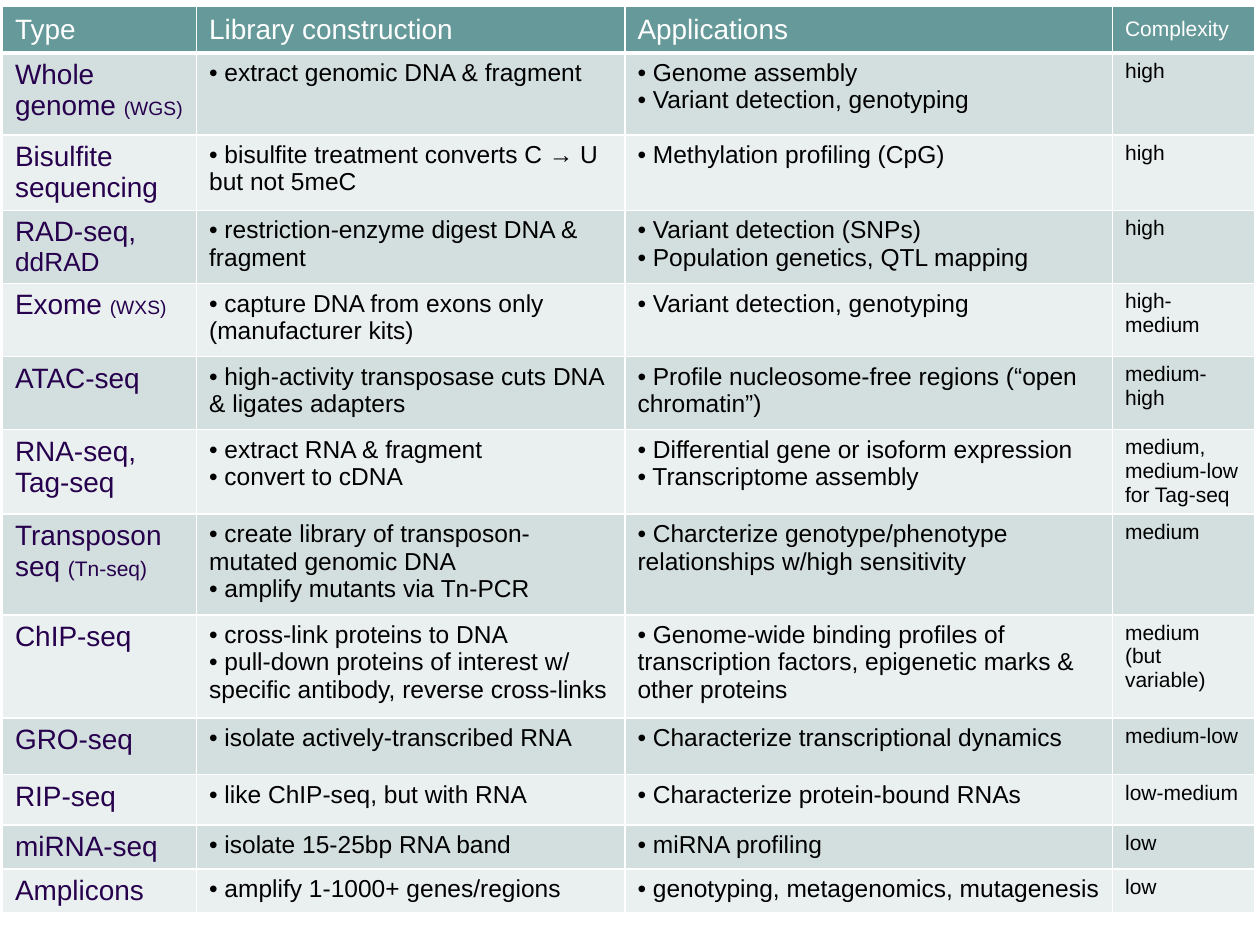
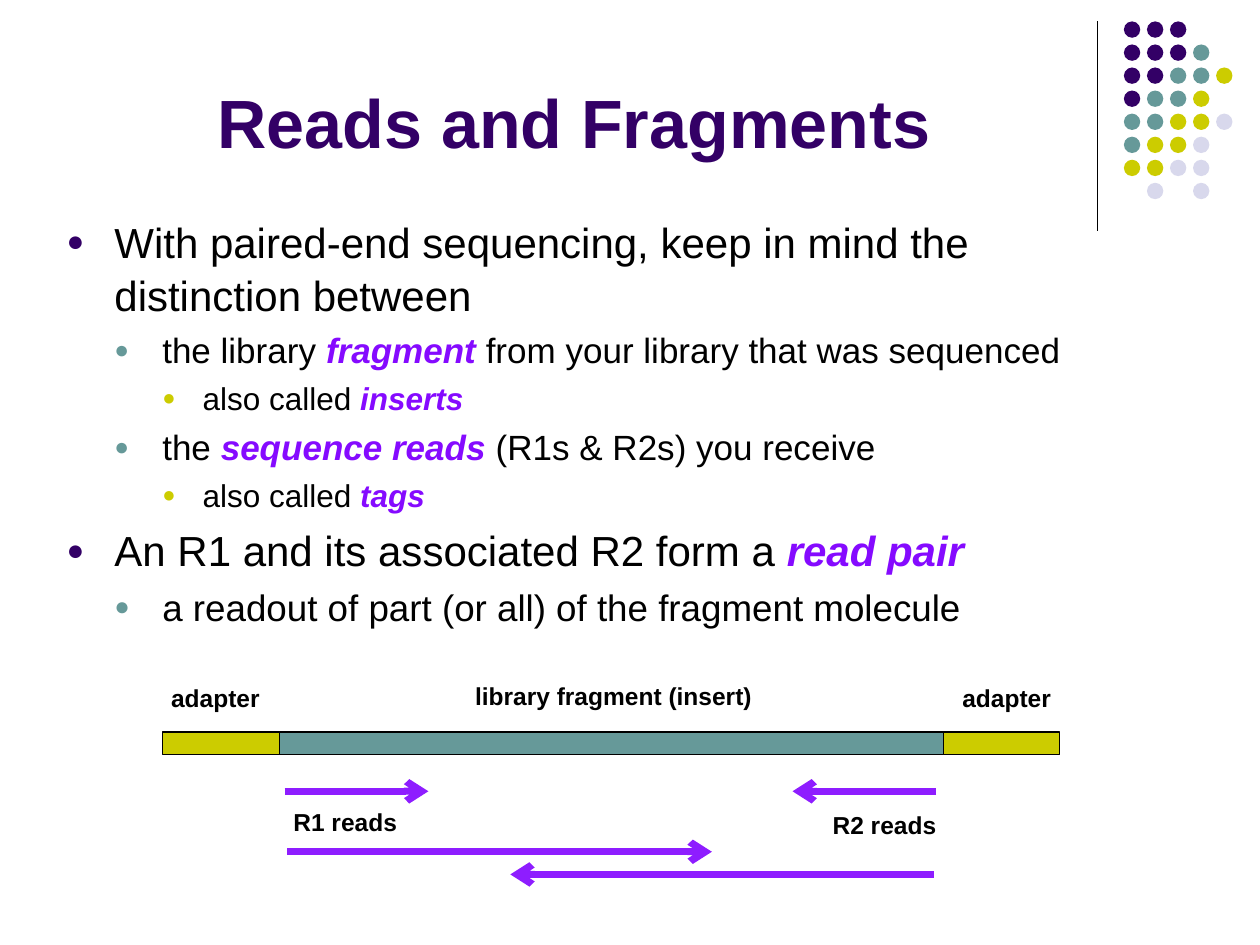
"""Build two slides: a table of sequencing library types, and reads versus fragments."""
from dataclasses import dataclass

from lxml.etree import SubElement
from pptx import Presentation
from pptx.dml.color import RGBColor
from pptx.enum.shapes import MSO_CONNECTOR as Connector, MSO_SHAPE as Shape
from pptx.enum.text import MSO_ANCHOR as Anchor, PP_ALIGN as Align
from pptx.oxml.ns import qn
from pptx.util import Inches, Pt


@dataclass(frozen=True)
class Theme:
    font: str = "Arial"
    purple: str = "330066"
    deep_purple: str = "26004D"
    violet: str = "850AFF"
    arrow: str = "8E1DFF"
    teal: str = "669999"
    olive: str = "CCCC00"
    lilac: str = "D8D8EC"
    dark_band: str = "D3DEDE"
    light_band: str = "EAEFEF"
    black: str = "000000"
    white: str = "FFFFFF"
    title: float = 39
    type_name: float = 16
    type_note: float = 11
    detail: float = 14
    small: float = 12


THEME = Theme()
WIDTH, HEIGHT = 10, 7.5

HEADINGS = ("Type", "Library construction", "Applications", "Complexity")
COLUMN_WIDTHS = (1.54, 3.4, 3.87, 1.13)
ROW_HEIGHTS = (0.37, 0.65, 0.6, 0.58, 0.58, 0.58, 0.67, 0.8, 0.82, 0.45, 0.4, 0.34, 0.34)
NOTE_SIZES = {"ddRAD": 15, "(Tn-seq)": 12}
LIBRARIES = [
    ("Whole genome *(WGS)", ["extract genomic DNA & fragment"],
     ["Genome assembly", "Variant detection, genotyping"], "high"),
    ("Bisulfite sequencing", ["bisulfite treatment converts C → U but not 5meC"],
     ["Methylation profiling (CpG)"], "high"),
    ("RAD-seq, *ddRAD", ["restriction-enzyme digest DNA & fragment"],
     ["Variant detection (SNPs)", "Population genetics, QTL mapping"], "high"),
    ("Exome *(WXS)", ["capture DNA from exons only (manufacturer kits)"],
     ["Variant detection, genotyping"], "high-medium"),
    ("ATAC-seq", ["high-activity transposase cuts DNA & ligates adapters"],
     ["Profile nucleosome-free regions (“open chromatin”)"], "medium-high"),
    ("RNA-seq,\nTag-seq", ["extract RNA & fragment", "convert to cDNA"],
     ["Differential gene or isoform expression", "Transcriptome assembly"],
     "medium,\nmedium-low for Tag-seq"),
    ("Transposon seq *(Tn-seq)",
     ["create library of transposon-mutated genomic DNA", "amplify mutants via Tn-PCR"],
     ["Charcterize genotype/phenotype relationships w/high sensitivity"], "medium"),
    ("ChIP-seq",
     ["cross-link proteins to DNA",
      "pull-down proteins of interest w/ specific antibody, reverse cross-links"],
     ["Genome-wide binding profiles of transcription factors, epigenetic marks & other proteins"],
     "medium\n(but variable)"),
    ("GRO-seq", ["isolate actively-transcribed RNA"],
     ["Characterize transcriptional dynamics"], "medium-low"),
    ("RIP-seq", ["like ChIP-seq, but with RNA"],
     ["Characterize protein-bound RNAs"], "low-medium"),
    ("miRNA-seq", ["isolate 15-25bp RNA band"], ["miRNA profiling"], "low"),
    ("Amplicons", ["amplify 1-1000+ genes/regions"],
     ["genotyping, metagenomics, mutagenesis"], "low"),
]

TITLE = "Reads and Fragments"
POINTS = [
    (0, 24, "With paired-end sequencing, keep in mind the\ndistinction between"),
    (1, 20, "the library *fragment *from your library that was sequenced"),
    (2, 18, "also called *inserts"),
    (1, 20, "the *sequence reads *(R1s & R2s) you receive"),
    (2, 18, "also called *tags"),
    (0, 24, "An R1 and its associated R2 form a *read pair"),
    (1, 21, "a readout of part (or all) of the fragment molecule"),
]
LEVELS = [(0.38, 0.38, THEME.purple), (0.76, 0.38, THEME.teal), (1.08, 0.32, THEME.olive)]

DOT_ROWS = ("PPP", "PPPT", "PPTTO", "PTTO", "TTOOL", "TOOL", "OOLL", " L L")
DOT_COLORS = {"P": THEME.purple, "T": THEME.teal, "O": THEME.olive, "L": THEME.lilac}

BAR_TOP, BAR_HEIGHT = 5.81, 0.18
SEGMENTS = [(1.29, 0.93, THEME.olive), (2.22, 5.27, THEME.teal), (7.49, 0.92, THEME.olive)]
READS = [(2.26, 3.4, 6.28), (7.43, 6.29, 6.28), (2.28, 5.65, 6.76), (7.41, 4.05, 6.94)]
LABELS = [
    ("adapter", 1.26, 5.37, 1.13, Align.LEFT),
    ("library fragment (insert)", 3.6, 5.36, 2.54, Align.CENTER),
    ("adapter", 7.31, 5.37, 1.13, Align.RIGHT),
    ("R1 reads", 2.23, 6.36, 1.13, Align.LEFT),
    ("R2 reads", 6.4, 6.38, 1.13, Align.RIGHT),
]


def rgb(color):
    return RGBColor.from_string(color)


def child(parent, tag, **attributes):
    return SubElement(parent, qn(tag), attributes)


def add_bullet(paragraph, mark, margin=0, hang=0, color=None, percent=100):
    properties = paragraph._p.get_or_add_pPr()
    properties.set("marL", str(Inches(margin)))
    properties.set("indent", str(-Inches(hang)))
    if color:
        child(child(properties, "a:buClr"), "a:srgbClr", val=color)
    child(properties, "a:buSzPct", val=str(percent * 1000))
    child(properties, "a:buFont", typeface=THEME.font)
    child(properties, "a:buChar", char=mark)


def write(paragraph, text, size, color=THEME.black, bold=False, style_accent=None):
    plain, *rest = text.split("*")
    paragraph.text = plain
    font = paragraph.font
    font.name, font.size, font.bold = THEME.font, Pt(size), bold
    font.color.rgb = rgb(color)
    for index, part in enumerate(rest):
        run = paragraph.add_run()
        run.text = part
        if index % 2 == 0:
            style_accent(run)


def shrink_note(run):
    run.font.size = Pt(NOTE_SIZES.get(run.text, THEME.type_note))


def emphasize(run):
    run.font.bold = run.font.italic = True
    run.font.color.rgb = rgb(THEME.violet)


def next_paragraph(frame, index):
    return frame.add_paragraph() if index else frame.paragraphs[0]


def add_text_frame(slide, left, top, width, height, anchor=Anchor.TOP):
    frame = slide.shapes.add_textbox(*map(Inches, (left, top, width, height))).text_frame
    frame.word_wrap = True
    frame.vertical_anchor = anchor
    return frame


def add_block(slide, preset, left, top, width, height, fill, outlined=False):
    block = slide.shapes.add_shape(preset, *map(Inches, (left, top, width, height)))
    block.shadow.inherit = False
    block.fill.solid()
    block.fill.fore_color.rgb = rgb(fill)
    if outlined:
        block.line.color.rgb = rgb(THEME.black)
        block.line.width = Pt(0.75)
    else:
        block.line.fill.background()


def add_line(slide, start, end, color, weight, arrow=False):
    line = slide.shapes.add_connector(Connector.STRAIGHT, *map(Inches, start + end))
    line.line.color.rgb = rgb(color)
    line.line.width = Pt(weight)
    properties = line.element.spPr
    if arrow:
        child(properties.find(qn("a:ln")), "a:tailEnd", type="arrow")
    child(properties, "a:effectLst")


def paint_cell(cell, fill, bottom_weight=1):
    properties = cell._tc.get_or_add_tcPr()
    for side, weight in (("L", 1), ("R", 1), ("T", 1), ("B", bottom_weight)):
        edge = child(properties, f"a:ln{side}", w=str(Pt(weight)))
        child(child(edge, "a:solidFill"), "a:srgbClr", val=THEME.white)
    cell.fill.solid()
    cell.fill.fore_color.rgb = rgb(fill)


def build_library_table(slide):
    table = slide.shapes.add_table(
        len(ROW_HEIGHTS), len(COLUMN_WIDTHS), Inches(0.02), Inches(0.05),
        Inches(sum(COLUMN_WIDTHS)), Inches(sum(ROW_HEIGHTS))).table
    table.first_row = table.horz_banding = False
    for column, width in zip(table.columns, COLUMN_WIDTHS):
        column.width = Inches(width)
    for row, height in zip(table.rows, ROW_HEIGHTS):
        row.height = Inches(height)

    for column, heading in enumerate(HEADINGS):
        cell = table.cell(0, column)
        paint_cell(cell, THEME.teal, bottom_weight=3)
        cell.vertical_anchor = Anchor.MIDDLE
        size = THEME.small if heading == "Complexity" else THEME.type_name
        write(cell.text_frame.paragraphs[0], heading, size, THEME.white)

    for row, (library, *details, complexity) in enumerate(LIBRARIES, 1):
        cells = [table.cell(row, column) for column in range(len(HEADINGS))]
        for cell in cells:
            paint_cell(cell, THEME.dark_band if row % 2 else THEME.light_band)
        write(cells[0].text_frame.paragraphs[0], library, THEME.type_name,
              THEME.deep_purple, style_accent=shrink_note)
        for cell, items in zip(cells[1:3], details):
            for index, item in enumerate(items):
                paragraph = next_paragraph(cell.text_frame, index)
                add_bullet(paragraph, "•")
                write(paragraph, f" {item}", THEME.detail)
        write(cells[3].text_frame.paragraphs[0], complexity, THEME.small)


def add_dot_corner(slide):
    add_line(slide, (8.71, 0.17), (8.71, 1.83), THEME.black, 0.75)
    pitch, size = 0.183, 0.13
    for row, dots in enumerate(DOT_ROWS):
        for column, dot in enumerate(dots):
            if dot in DOT_COLORS:
                add_block(slide, Shape.OVAL, 8.92 + column * pitch, 0.17 + row * pitch,
                          size, size, DOT_COLORS[dot])


def build_reads_slide(slide):
    add_dot_corner(slide)
    title = add_text_frame(slide, 0.43, 0.34, 8.25, 1, Anchor.BOTTOM).paragraphs[0]
    title.alignment = Align.CENTER
    write(title, TITLE, THEME.title, THEME.purple, bold=True)

    body = add_text_frame(slide, 0.43, 1.65, 9.31, 3.6)
    for index, (level, size, point) in enumerate(POINTS):
        paragraph = next_paragraph(body, index)
        margin, hang, color = LEVELS[level]
        paragraph.level = level
        paragraph.line_spacing = 1.05
        paragraph.space_before = Pt(0.2 * size if index else 0)
        add_bullet(paragraph, "●", margin, hang, color, 70)
        write(paragraph, point, size, style_accent=emphasize)

    for left, width, color in SEGMENTS:
        add_block(slide, Shape.RECTANGLE, left, BAR_TOP, width, BAR_HEIGHT, color, outlined=True)
    for start, end, level in READS:
        add_line(slide, (start, level), (end, level), THEME.arrow, 4, arrow=True)
    for label, left, top, width, alignment in LABELS:
        paragraph = add_text_frame(slide, left, top, width, 0.33).paragraphs[0]
        paragraph.alignment = alignment
        write(paragraph, label, THEME.detail, bold=True)


def main():
    deck = Presentation()
    deck.slide_width, deck.slide_height = Inches(WIDTH), Inches(HEIGHT)
    blank = deck.slide_layouts[6]
    for build in (build_library_table, build_reads_slide):
        build(deck.slides.add_slide(blank))
    deck.save("out.pptx")


if __name__ == "__main__":
    main()
